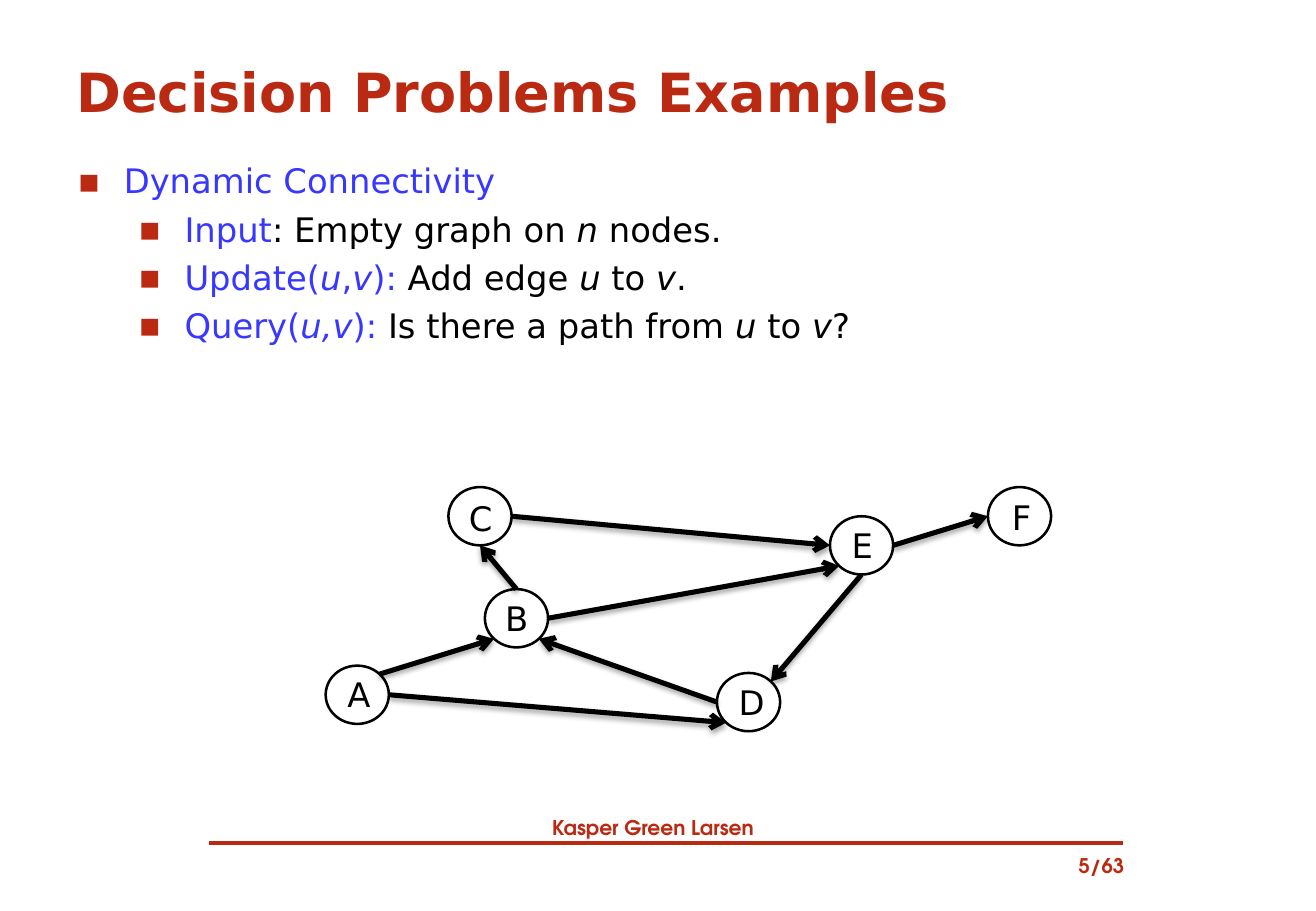
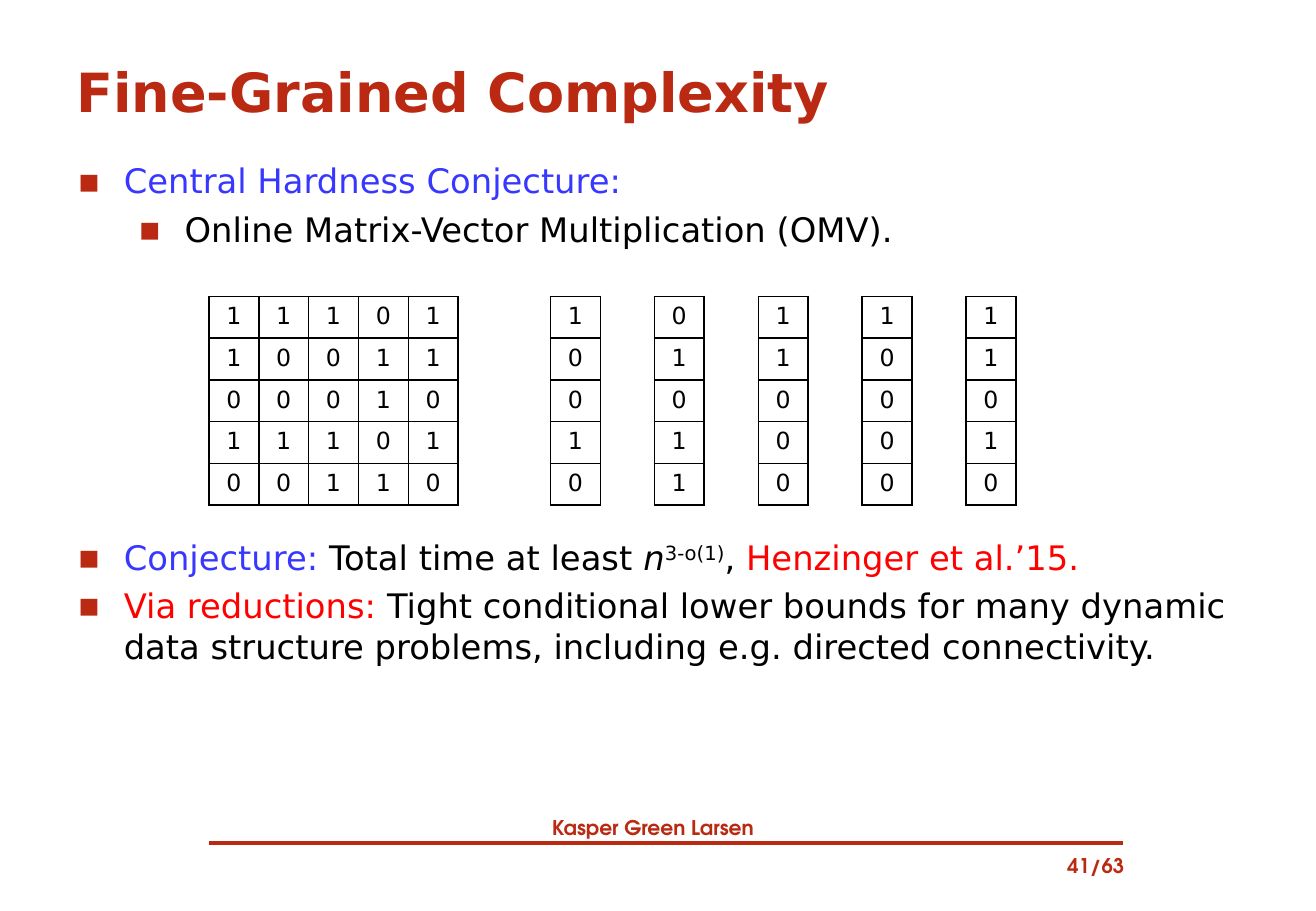
from dataclasses import dataclass
from math import cos, radians, sin
from typing import Any, NamedTuple

from lxml.etree import SubElement
from pptx import Presentation
from pptx.dml.color import RGBColor
from pptx.enum.shapes import MSO_CONNECTOR, MSO_SHAPE
from pptx.enum.text import MSO_ANCHOR, MSO_AUTO_SIZE, PP_ALIGN
from pptx.oxml import parse_xml
from pptx.oxml.ns import nsdecls, qn
from pptx.shapes.connector import Connector
from pptx.slide import Slide
from pptx.text.text import TextFrame
from pptx.util import Inches, Pt


@dataclass(frozen=True)
class Theme:
    red: RGBColor = RGBColor(0xBA, 0x2A, 0x12)
    blue: RGBColor = RGBColor(0x37, 0x37, 0xFF)
    bright_red: RGBColor = RGBColor(0xFF, 0x00, 0x00)
    black: RGBColor = RGBColor(0x00, 0x00, 0x00)
    body_font: str = "DejaVu Sans"
    footer_font: str = "TeX Gyre Adventor"
    title_size: Pt = Pt(32)
    body_size: Pt = Pt(20)
    cell_size: Pt = Pt(14)
    footer_size: Pt = Pt(12)
    bullet_gap: Pt = Pt(4.6)


THEME = Theme()
TITLE_FORMAT = {"name": THEME.body_font, "size": THEME.title_size, "bold": True}
BODY_FORMAT = {"name": THEME.body_font, "size": THEME.body_size}
CELL_FORMAT = {"name": THEME.body_font, "size": THEME.cell_size}
FOOTER_FORMAT = {"name": THEME.footer_font, "size": THEME.footer_size, "bold": True}


class Box(NamedTuple):
    left: float
    top: float
    width: float
    height: float

    def lengths(self) -> tuple[Inches, ...]:
        return tuple(Inches(value) for value in self)


class Span(NamedTuple):
    text: str
    color: RGBColor = THEME.black
    italic: bool = False
    superscript: bool = False


class Bullet(NamedTuple):
    level: int
    spans: list[Span]


@dataclass(frozen=True)
class Node:
    left: float
    top: float
    label_left: float = 0.08
    label_top: float = 0.02
    width: float = 0.52
    height: float = 0.48

    def site(self, angle: float) -> tuple[Inches, Inches]:
        """Point on the outline; degrees run clockwise from the right."""
        x = self.left + self.width / 2 * (1 + cos(radians(angle)))
        y = self.top + self.height / 2 * (1 + sin(radians(angle)))
        return Inches(x), Inches(y)


class Edge(NamedTuple):
    start: str
    start_angle: float
    end: str
    end_angle: float


RIGHT, BOTTOM_RIGHT, BOTTOM, BOTTOM_LEFT = 0, 45, 90, 135
LEFT, TOP, TOP_RIGHT = 180, 270, 315

NODES = {
    "A": Node(2.68, 5.48),
    "B": Node(3.99, 4.85, label_left=0.07),
    "C": Node(3.69, 4.01, label_left=0.07, label_top=0.04),
    "D": Node(5.9, 5.54),
    "E": Node(6.83, 4.25),
    "F": Node(8.13, 4.01, label_left=0.1, label_top=0.03),
}
EDGES = [
    Edge("D", LEFT, "B", BOTTOM_RIGHT),
    Edge("C", RIGHT, "E", LEFT),
    Edge("A", TOP_RIGHT, "B", BOTTOM_LEFT),
    Edge("B", TOP, "C", BOTTOM),
    Edge("E", BOTTOM, "D", TOP_RIGHT),
    Edge("B", RIGHT, "E", BOTTOM_LEFT),
    Edge("A", RIGHT, "D", BOTTOM_LEFT),
    Edge("E", RIGHT, "F", LEFT),
]

CONNECTIVITY = [
    Bullet(0, [Span("Dynamic Connectivity", THEME.blue)]),
    Bullet(1, [Span("Input", THEME.blue), Span(": Empty graph on "),
               Span("n ", italic=True), Span("nodes.")]),
    Bullet(1, [Span("Update(", THEME.blue), Span("u", THEME.blue, italic=True),
               Span(",", THEME.blue), Span("v", THEME.blue, italic=True),
               Span("): ", THEME.blue), Span("Add edge "), Span("u", italic=True),
               Span(" to "), Span("v", italic=True), Span(".")]),
    Bullet(1, [Span("Query(", THEME.blue), Span("u,v", THEME.blue, italic=True),
               Span("): ", THEME.blue), Span("Is there a path from "),
               Span("u", italic=True), Span(" to "), Span("v", italic=True),
               Span("?")]),
]
HARDNESS = [
    Bullet(0, [Span("Central Hardness Conjecture:", THEME.blue)]),
    Bullet(1, [Span("Online Matrix-Vector Multiplication (OMV).")]),
]
CONJECTURE = [
    Bullet(0, [Span("Conjecture: ", THEME.blue), Span("Total time at least "),
               Span("n", italic=True), Span("3-o(1)", superscript=True),
               Span(", "), Span("Henzinger et al.’15.", THEME.bright_red)]),
    Bullet(0, [Span("Via reductions: ", THEME.bright_red),
               Span("Tight conditional lower bounds for many dynamic data structure "
                    "problems, including e.g. directed connectivity.")]),
]

MATRIX = ["11101", "10011", "00010", "11101", "00110"]
VECTORS = ["10010", "01011", "11000", "10000", "11010"]
CELL_WIDTH, TABLE_HEIGHT, TABLE_TOP = 0.41, 1.72, 2.44
MATRIX_LEFT, VECTORS_LEFT, VECTOR_STEP = 1.72, 4.53, 0.855


def apply_format(target: Any, values: dict[str, Any]) -> None:
    for name, value in values.items():
        setattr(target, name, value)


def add_run(paragraph: Any, span: Span, font_format: dict[str, Any]) -> None:
    run = paragraph.add_run()
    run.text = span.text
    apply_format(run.font, font_format | {"italic": span.italic})
    run.font.color.rgb = span.color
    if span.superscript:
        run.font._element.set("baseline", "30000")


def add_text_box(slide: Slide, box: Box) -> TextFrame:
    text_frame = slide.shapes.add_textbox(*box.lengths()).text_frame
    text_frame.word_wrap = True
    return text_frame


def add_line_of_text(slide: Slide, box: Box, span: Span, font_format: dict[str, Any],
                     alignment: PP_ALIGN = PP_ALIGN.LEFT) -> None:
    paragraph = add_text_box(slide, box).paragraphs[0]
    paragraph.alignment = alignment
    add_run(paragraph, span, font_format)


def add_bullets(slide: Slide, box: Box, bullets: list[Bullet]) -> None:
    text_frame = add_text_box(slide, box)
    for index, bullet in enumerate(bullets):
        paragraph = text_frame.add_paragraph() if index else text_frame.paragraphs[0]
        properties = paragraph._p.get_or_add_pPr()
        properties.set("marL", str(Inches(0.38 + 0.5 * bullet.level)))
        properties.set("indent", str(Inches(-0.38)))
        color = SubElement(properties, qn("a:buClr"))
        SubElement(color, qn("a:srgbClr"), val=str(THEME.red))
        SubElement(properties, qn("a:buFont"), typeface=THEME.body_font)
        SubElement(properties, qn("a:buChar"), char="▪")
        paragraph.level = bullet.level
        if index:
            paragraph.space_before = THEME.bullet_gap
        for span in bullet.spans:
            add_run(paragraph, span, BODY_FORMAT)


def add_line(slide: Slide, start: tuple[Inches, Inches], end: tuple[Inches, Inches],
             color: RGBColor, width: Pt) -> Connector:
    connector = slide.shapes.add_connector(MSO_CONNECTOR.STRAIGHT, *start, *end)
    connector.line.color.rgb = color
    connector.line.width = width
    SubElement(connector.element.spPr, qn("a:effectLst"))
    return connector


def add_edge(slide: Slide, edge: Edge) -> None:
    """Draw a directed edge with an arrowhead and a soft shadow below."""
    connector = add_line(slide, NODES[edge.start].site(edge.start_angle),
                         NODES[edge.end].site(edge.end_angle), THEME.black, Pt(3))
    properties = connector.element.spPr
    SubElement(properties.find(qn("a:ln")), qn("a:tailEnd"), type="arrow")
    properties.find(qn("a:effectLst")).append(parse_xml(
        f'<a:outerShdw {nsdecls("a")} blurRad="{Pt(3.1)}" dist="{Pt(1.8)}" '
        f'dir="5400000" rotWithShape="0"><a:srgbClr val="{THEME.black}">'
        '<a:alpha val="35000"/></a:srgbClr></a:outerShdw>'))


def add_node(slide: Slide, name: str, node: Node) -> None:
    box = Box(node.left, node.top, node.width, node.height)
    ellipse = slide.shapes.add_shape(MSO_SHAPE.OVAL, *box.lengths())
    ellipse.shadow.inherit = False
    ellipse.fill.background()
    ellipse.line.color.rgb = THEME.black
    ellipse.line.width = Pt(1.5)
    label_box = Box(node.left + node.label_left, node.top + node.label_top, 0.47, 0.44)
    add_line_of_text(slide, label_box, Span(name), BODY_FORMAT)


def add_bit_table(slide: Slide, left: float, rows: list[str]) -> None:
    """Draw a bordered grid; each string is one row of digits."""
    column_count = len(rows[0])
    box = Box(left, TABLE_TOP, CELL_WIDTH * column_count, TABLE_HEIGHT)
    table = slide.shapes.add_table(len(rows), column_count, *box.lengths()).table
    apply_format(table, {"first_row": False, "horz_banding": False})
    for row_index, row in enumerate(rows):
        for column_index, digit in enumerate(row):
            cell = table.cell(row_index, column_index)
            cell.fill.background()
            properties = cell._tc.get_or_add_tcPr()
            for position, side in enumerate(("lnL", "lnR", "lnT", "lnB")):
                properties.insert(position, parse_xml(
                    f'<a:{side} {nsdecls("a")} w="{Pt(1)}"><a:solidFill>'
                    f'<a:srgbClr val="{THEME.black}"/></a:solidFill></a:{side}>'))
            paragraph = cell.text_frame.paragraphs[0]
            paragraph.alignment = PP_ALIGN.CENTER
            add_run(paragraph, Span(digit), CELL_FORMAT)


def add_base_slide(presentation: Any, title: str, page: int) -> Slide:
    """Add a slide with the shared title style and footer."""
    slide = presentation.slides.add_slide(presentation.slide_layouts[5])
    placeholder = slide.shapes.title
    apply_format(placeholder, dict(zip(Box._fields, Box(0.53, 0.36, 9.75, 0.77).lengths())))
    apply_format(placeholder.text_frame, {
        "vertical_anchor": MSO_ANCHOR.MIDDLE, "auto_size": MSO_AUTO_SIZE.NONE,
        "word_wrap": True})
    paragraph = placeholder.text_frame.paragraphs[0]
    paragraph.alignment = PP_ALIGN.LEFT
    add_run(paragraph, Span(title, THEME.red), TITLE_FORMAT)

    add_line_of_text(slide, Box(0.53, 6.66, 9.69, 0.3),
                     Span("Kasper Green Larsen", THEME.red), FOOTER_FORMAT, PP_ALIGN.CENTER)
    add_line_of_text(slide, Box(8.37, 6.98, 0.98, 0.3),
                     Span(f"{page}/63", THEME.red), FOOTER_FORMAT, PP_ALIGN.RIGHT)
    add_line(slide, (Inches(1.72), Inches(6.94)), (Inches(9.24), Inches(6.94)),
             THEME.red, Pt(2.25))
    return slide


def add_connectivity_slide(presentation: Any) -> None:
    slide = add_base_slide(presentation, "Decision Problems Examples", 5)
    add_bullets(slide, Box(0.54, 1.27, 9.68, 1.7), CONNECTIVITY)
    for edge in EDGES:
        add_edge(slide, edge)
    for name, node in NODES.items():
        add_node(slide, name, node)


def add_complexity_slide(presentation: Any) -> None:
    slide = add_base_slide(presentation, "Fine-Grained Complexity", 41)
    add_bullets(slide, Box(0.54, 1.27, 9.68, 0.9), HARDNESS)
    add_bullets(slide, Box(0.54, 4.37, 9.68, 1.3), CONJECTURE)
    add_bit_table(slide, MATRIX_LEFT, MATRIX)
    for index, vector in enumerate(VECTORS):
        add_bit_table(slide, VECTORS_LEFT + index * VECTOR_STEP, list(vector))


def main() -> None:
    presentation = Presentation()
    presentation.slide_width = Inches(10.83)
    presentation.slide_height = Inches(7.5)
    add_connectivity_slide(presentation)
    add_complexity_slide(presentation)
    presentation.save("out.pptx")


if __name__ == "__main__":
    main()
